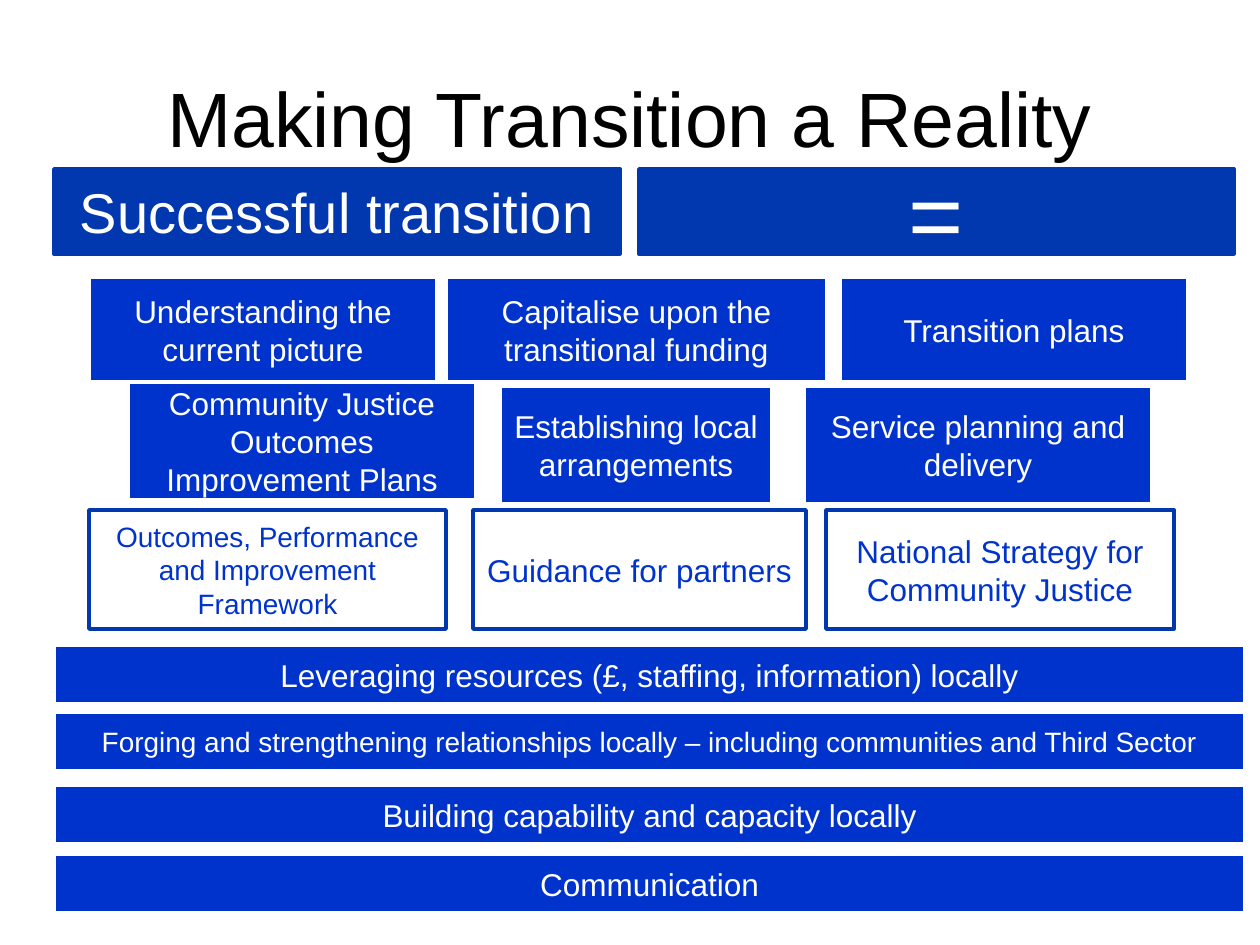
from pptx import Presentation
from pptx import util as u
from pptx.dml.color import RGBColor
from pptx.enum import shapes, text

COLOURS = {"black": "000000", "white": "FFFFFF", "blue": "0033CC", "navy": "0137AF"}
FONT = "Arial"
PX_PER_INCH = 126


def px(length):
    return u.Emu(round(length * u.Inches(1) / PX_PER_INCH))


def colour(name):
    return RGBColor.from_string(COLOURS[name])


class TransitionSlide:
    def __init__(self, slide):
        self.slide = slide

    def label(self, frame, wording, size, ink):
        frame.word_wrap = True
        frame.vertical_anchor = text.MSO_ANCHOR.MIDDLE
        paragraph = frame.paragraphs[0]
        paragraph.alignment = text.PP_ALIGN.CENTER
        run = paragraph.add_run()
        run.text = wording
        run.font.name = FONT
        run.font.size = u.Pt(size)
        run.font.color.rgb = colour(ink)

    def title(self, wording, left, top, width, height):
        heading = self.slide.shapes.title
        heading.left, heading.top = px(left), px(top)
        heading.width, heading.height = px(width), px(height)
        self.label(heading.text_frame, wording, 44, "black")

    def block(self, wording, left, top, width, height, size=18,
              fill="blue", line="white", ink="white"):
        brick = self.slide.shapes.add_shape(
            shapes.MSO_SHAPE.RECTANGLE, px(left), px(top), px(width), px(height))
        brick.shadow.inherit = False
        brick.fill.solid()
        brick.fill.fore_color.rgb = colour(fill)
        brick.line.color.rgb = colour(line)
        brick.line.width = u.Pt(2)
        frame = brick.text_frame
        frame.margin_left = frame.margin_right = px(11)
        self.label(frame, wording, size, ink)

    def row(self, top, height, blocks, **style):
        """Draw blocks of (wording, left, width, size) at one height."""
        for wording, left, width, size in blocks:
            self.block(wording, left, top, width, height, size, **style)


def main():
    deck = Presentation()
    deck.slide_width, deck.slide_height = px(1260), px(945)
    title_only = deck.slide_layouts[5]
    page = TransitionSlide(deck.slides.add_slide(title_only))

    page.title("Making Transition a Reality", 63, 38, 1134, 158)

    page.row(510, 119, [
        ("Outcomes, Performance and Improvement Framework", 89, 357, 16),
        ("Guidance for partners", 473, 333, 18),
        ("National Strategy for Community Justice", 826, 348, 18),
    ], fill="white", line="navy", ink="blue")

    foundations = [
        ("Leveraging resources (£, staffing, information) locally", 645, 18),
        ("Forging and strengthening relationships locally – including "
         "communities and Third Sector", 712, 16),
        ("Building capability and capacity locally", 785, 18),
        ("Communication", 854, 18),
    ]
    for wording, top, size in foundations:
        page.block(wording, 54, top, 1191, 59, size)

    page.row(169, 85, [
        ("Successful transition", 54, 566, 32),
        ("=", 639, 595, 54),
    ], fill="navy", line="navy")

    page.row(277, 105, [
        ("Understanding the current picture", 89, 348, 18),
        ("Capitalise upon the transitional funding", 446, 381, 18),
        ("Transition plans", 840, 348, 18),
    ])
    page.block("Community Justice Outcomes Improvement Plans", 128, 382, 348, 118)
    page.row(386, 118, [
        ("Establishing local arrangements", 500, 272, 18),
        ("Service planning and delivery", 804, 348, 18),
    ])

    deck.save("out.pptx")


if __name__ == "__main__":
    main()
